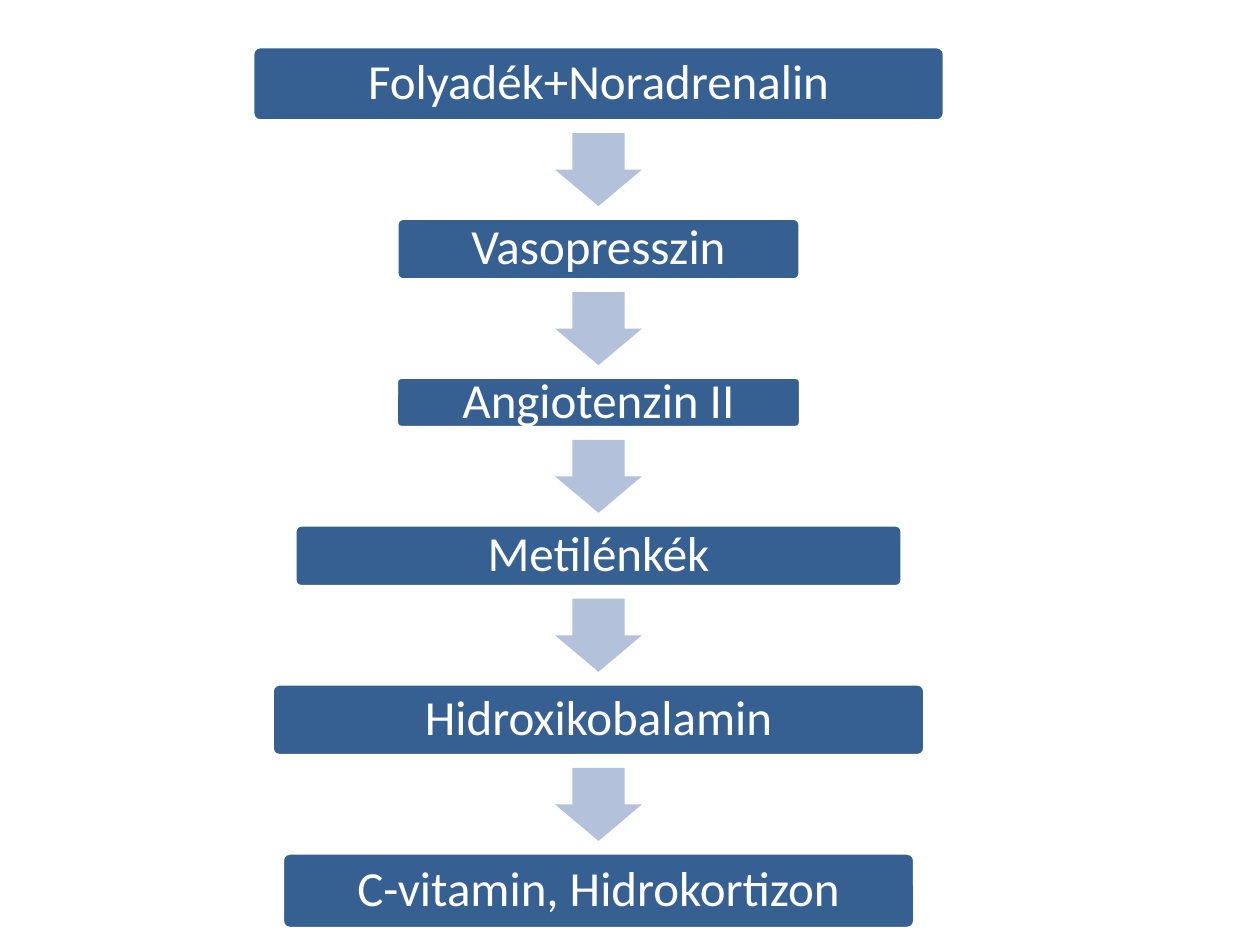
from pptx import Presentation
from pptx.dml.color import RGBColor
from pptx.enum.shapes import MSO_SHAPE
from pptx.enum.text import MSO_ANCHOR, PP_ALIGN
from pptx.util import Inches, Pt

BOX = MSO_SHAPE.ROUNDED_RECTANGLE
ARROW = MSO_SHAPE.RIGHT_ARROW
MIDDLE = MSO_ANCHOR.MIDDLE
CENTER = PP_ALIGN.CENTER
COLORS = {"step": "376092", "arrow": "B3C1DB", "light": "FFFFFF"}

SLIDE_WIDTH, SLIDE_HEIGHT = 10, 7.5
AXIS = 0.475 * SLIDE_WIDTH
FIRST_TOP = 0.37
GAP = 0.772
ARROW_LENGTH, ARROW_BREADTH = 0.58, 0.69
INSET = Inches(0.12)

# Treatment steps in order: wording, box width, box height
STEPS = [
    ("Folyadék+Noradrenalin", 5.49, 0.59),
    ("Vasopresszin", 3.2, 0.49),
    ("Angiotenzin II", 3.21, 0.4),
    ("Metilénkék", 4.82, 0.49),
    ("Hidroxikobalamin", 5.18, 0.57),
    ("C-vitamin, Hidrokortizon", 5.02, 0.6),
]


def add_centered(kind, middle, width, height, fill):
    """Add a filled preset shape centred on the axis at the given height."""
    shape = slide.shapes.add_shape(
        kind, Inches(AXIS - width / 2), Inches(middle - height / 2),
        Inches(width), Inches(height))
    shape.shadow.inherit = False
    shape.fill.solid()
    shape.fill.fore_color.rgb = RGBColor.from_string(COLORS[fill])
    shape.line.fill.background()
    return shape


def write_text(shape, text, size=28, color="light", font="Calibri"):
    frame = shape.text_frame
    frame.word_wrap = True
    frame.vertical_anchor = MIDDLE
    frame.margin_left = frame.margin_right = INSET
    frame.margin_top = frame.margin_bottom = INSET
    paragraph = frame.paragraphs[0]
    paragraph.text = text
    paragraph.alignment = CENTER
    paragraph.line_spacing = 0.9
    paragraph.font.name = font
    paragraph.font.size = Pt(size)
    paragraph.font.color.rgb = RGBColor.from_string(COLORS[color])


prs = Presentation()
prs.slide_width, prs.slide_height = Inches(SLIDE_WIDTH), Inches(SLIDE_HEIGHT)
slide = prs.slides.add_slide(prs.slide_layouts[6])

top = FIRST_TOP
for index, (wording, width, height) in enumerate(STEPS):
    if index:
        arrow = add_centered(ARROW, top - GAP / 2, ARROW_LENGTH, ARROW_BREADTH, "arrow")
        arrow.rotation = 90
        arrow.adjustments[0] = 0.6
        arrow.adjustments[1] = 0.5
    step = add_centered(BOX, top + height / 2, width, height, "step")
    step.adjustments[0] = 0.1
    step.line.color.rgb = RGBColor.from_string(COLORS["light"])
    step.line.width = Pt(2)
    write_text(step, wording)
    top += height + GAP

prs.save("out.pptx")
